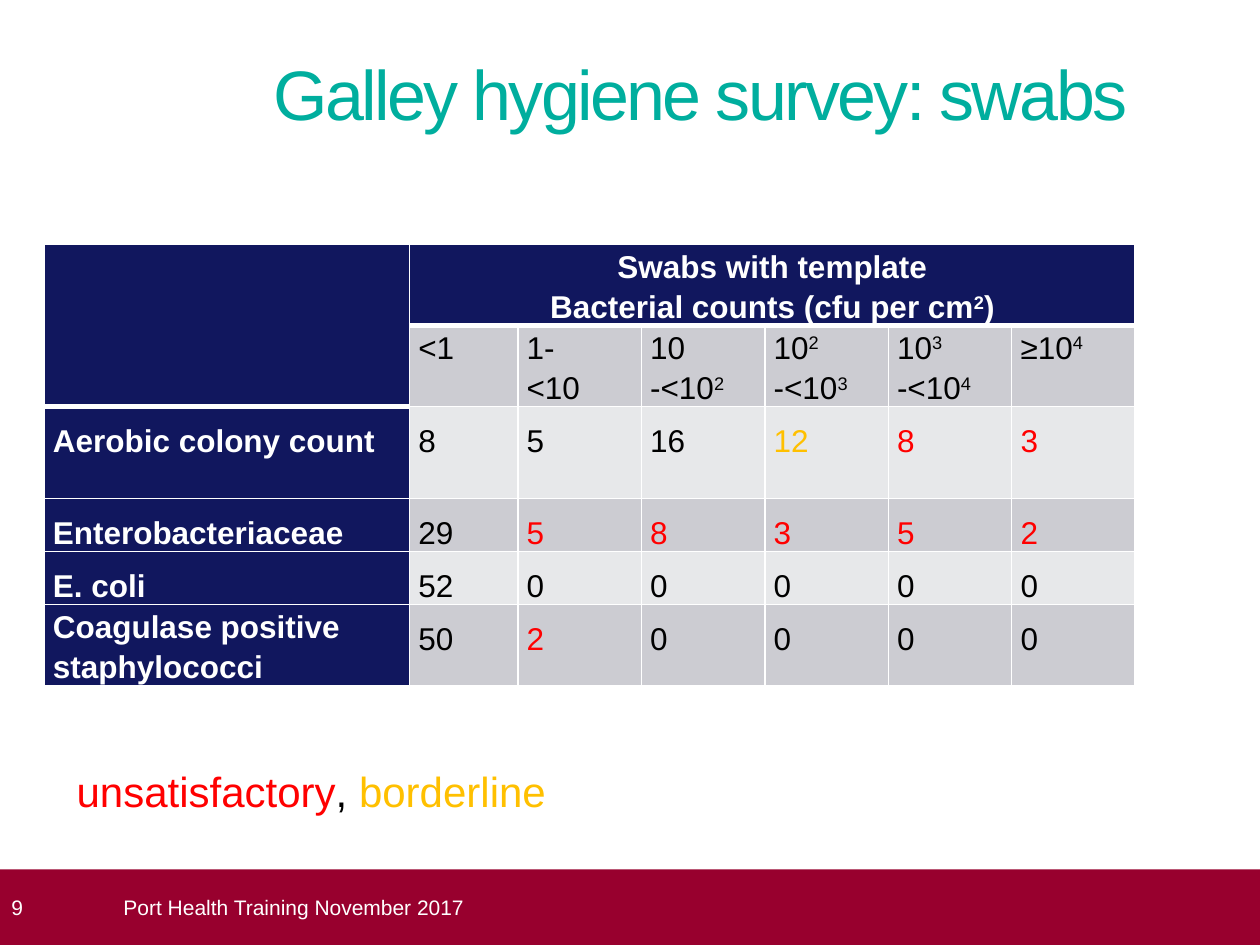
from lxml import etree
from pptx import Presentation
from pptx.dml.color import RGBColor
from pptx.enum.shapes import MSO_SHAPE
from pptx.enum.text import MSO_ANCHOR, PP_ALIGN
from pptx.oxml.ns import qn
from pptx.util import Inches, Pt

RECT = MSO_SHAPE.RECTANGLE
MIDDLE, BOTTOM, TOP = MSO_ANCHOR.MIDDLE, MSO_ANCHOR.BOTTOM, MSO_ANCHOR.TOP
LEFT, CENTER = PP_ALIGN.LEFT, PP_ALIGN.CENTER

TEAL = RGBColor(0x00, 0xAE, 0x9E)
NAVY = RGBColor(0x11, 0x17, 0x5E)
MAROON = RGBColor(0x98, 0x00, 0x2E)
WHITE = RGBColor(0xFF, 0xFF, 0xFF)
BLACK = RGBColor(0x00, 0x00, 0x00)
RED = RGBColor(0xFF, 0x00, 0x00)
AMBER = RGBColor(0xFF, 0xC0, 0x00)
BANDS = [RGBColor(0xE7, 0xE8, 0xEA), RGBColor(0xCC, 0xCC, 0xD2)]

# Content: "^" raises the next character
TITLE = "Galley hygiene survey: swabs"
HEADING = ["Swabs with template", "Bacterial counts (cfu per cm^2)"]
RANGES = [["<1"], ["1-", "<10"], ["10 -<10^2"], ["10^2 -<10^3"],
          ["10^3 -<10^4"], ["≥10^4"]]
# Organism, counts, colours of the flagged columns
RESULTS = [
    ("Aerobic colony count", [8, 5, 16, 12, 8, 3], {3: AMBER, 4: RED, 5: RED}),
    ("Enterobacteriaceae", [29, 5, 8, 3, 5, 2], dict.fromkeys(range(1, 6), RED)),
    ("E. coli", [52, 0, 0, 0, 0, 0], {}),
    ("Coagulase positive staphylococci", [50, 2, 0, 0, 0, 0], {1: RED}),
]
LEGEND = [("unsatisfactory", RED), (", ", BLACK), ("borderline", AMBER)]
FOOTER = "Port Health Training November 2017"
PAGE = "9"

COL_WIDTHS = [2.9, 0.86] + [0.98] * 5
ROW_HEIGHTS = [0.56, 0.56, 0.73, 0.37, 0.37, 0.56]


def add_run(p, text, size, color, bold=False):
    r = p.add_run()
    r.text = text
    for name, value in dict(name="Arial", size=Pt(size), bold=bold).items():
        setattr(r.font, name, value)
    r.font.color.rgb = color
    return r


def set_frame(tf, anchor=TOP, margins=(0, 0, 0, 0)):
    tf.word_wrap = True
    tf.vertical_anchor = anchor
    sides = ("margin_left", "margin_top", "margin_right", "margin_bottom")
    for side, value in zip(sides, margins):
        setattr(tf, side, Inches(value))


def set_borders(cell, **widths):
    tc_pr = cell._tc.get_or_add_tcPr()
    for i, side in enumerate("LRTB"):
        ln = etree.Element(qn(f"a:ln{side}"), w=str(Pt(widths.get(side, 1))))
        fill = etree.SubElement(ln, qn("a:solidFill"))
        etree.SubElement(fill, qn("a:srgbClr"), val=str(WHITE))
        tc_pr.insert(i, ln)


def write_cell(cell, lines, color, bold=False, spacing=1.5, align=LEFT):
    tf = cell.text_frame
    for i, line in enumerate(lines):
        p = tf.add_paragraph() if i else tf.paragraphs[0]
        p.alignment, p.line_spacing = align, spacing
        first, *raised = line.split("^")
        add_run(p, first, 18, color, bold)
        for part in raised:
            r = add_run(p, part[0], 18, color, bold)
            r.font._element.set("baseline", "30000")
            if part[1:]:
                add_run(p, part[1:], 18, color, bold)


prs = Presentation()
prs.slide_width, prs.slide_height = Inches(10), Inches(7.5)
s = prs.slides.add_slide(prs.slide_layouts[5])

# Title
title = s.shapes.title
title.left, title.top, title.width, title.height = map(Inches, (2.17, 0.36, 8.78, 0.71))
set_frame(title.text_frame, BOTTOM)
p = title.text_frame.paragraphs[0]
p.alignment = LEFT
add_run(p, TITLE, 40, TEAL).font._element.set("spc", "-150")

# Table grid, fills and borders
table = s.shapes.add_table(len(ROW_HEIGHTS), len(COL_WIDTHS), Inches(0.35), Inches(1.94),
                           Inches(sum(COL_WIDTHS)), Inches(sum(ROW_HEIGHTS))).table
for col, width in zip(table.columns, COL_WIDTHS):
    col.width = Inches(width)
for row, height in zip(table.rows, ROW_HEIGHTS):
    row.height = Inches(height)
for i, row in enumerate(table.rows):
    for j, cell in enumerate(row.cells):
        cell.margin_left = cell.margin_right = Inches(0.07)
        cell.margin_top = cell.margin_bottom = 0
        cell.fill.solid()
        cell.fill.fore_color.rgb = NAVY if i == 0 or j == 0 else BANDS[i % 2]
        last_head = 1 if j == 0 else 0
        set_borders(cell, T=3 if i == last_head + 1 else 1, B=3 if i == last_head else 1)
table.cell(0, 0).merge(table.cell(1, 0))
table.cell(0, 1).merge(table.cell(0, len(COL_WIDTHS) - 1))

# Table text
write_cell(table.cell(0, 1), HEADING, WHITE, True, 1.15, CENTER)
for j, lines in enumerate(RANGES, 1):
    write_cell(table.cell(1, j), lines, BLACK, spacing=1.15)
for i, (organism, counts, flags) in enumerate(RESULTS, 2):
    two_lines = organism.startswith("Coagulase")
    write_cell(table.cell(i, 0), [organism], WHITE, True, 1.15 if two_lines else 1.5)
    for j, count in enumerate(counts):
        write_cell(table.cell(i, j + 1), [str(count)], flags.get(j, BLACK))

# Footer bar with page number
bar = s.shapes.add_shape(RECT, 0, Inches(6.9), Inches(10), Inches(0.6))
bar.shadow.inherit = False
bar.fill.solid()
bar.fill.fore_color.rgb = MAROON
bar.line.fill.background()
set_frame(bar.text_frame, MIDDLE, (0.09, 0, 0.1, 0))
p = bar.text_frame.paragraphs[0]
p.alignment = LEFT
add_run(p, PAGE, 12, WHITE)

# Footer text and colour legend
for box, anchor, margins, size, runs in [
    ((0.98, 6.9, 8.82, 0.6), MIDDLE, (0, 0, 0, 0), 12, [(FOOTER, WHITE)]),
    ((0.51, 6.03, 5.35, 0.5), TOP, (0.1, 0.05, 0.1, 0.05), 24, LEGEND),
]:
    tf = s.shapes.add_textbox(*map(Inches, box)).text_frame
    set_frame(tf, anchor, margins)
    for text, color in runs:
        add_run(tf.paragraphs[0], text, size, color)

prs.save("out.pptx")
